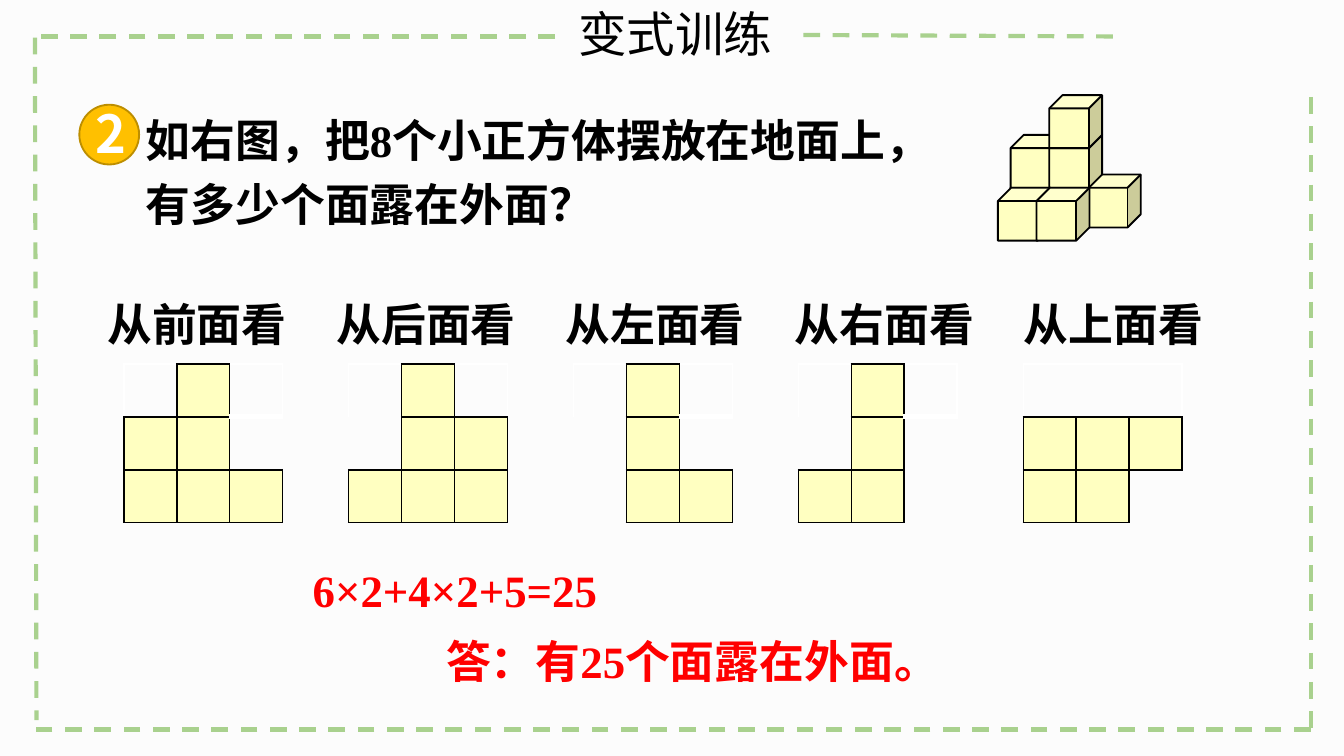
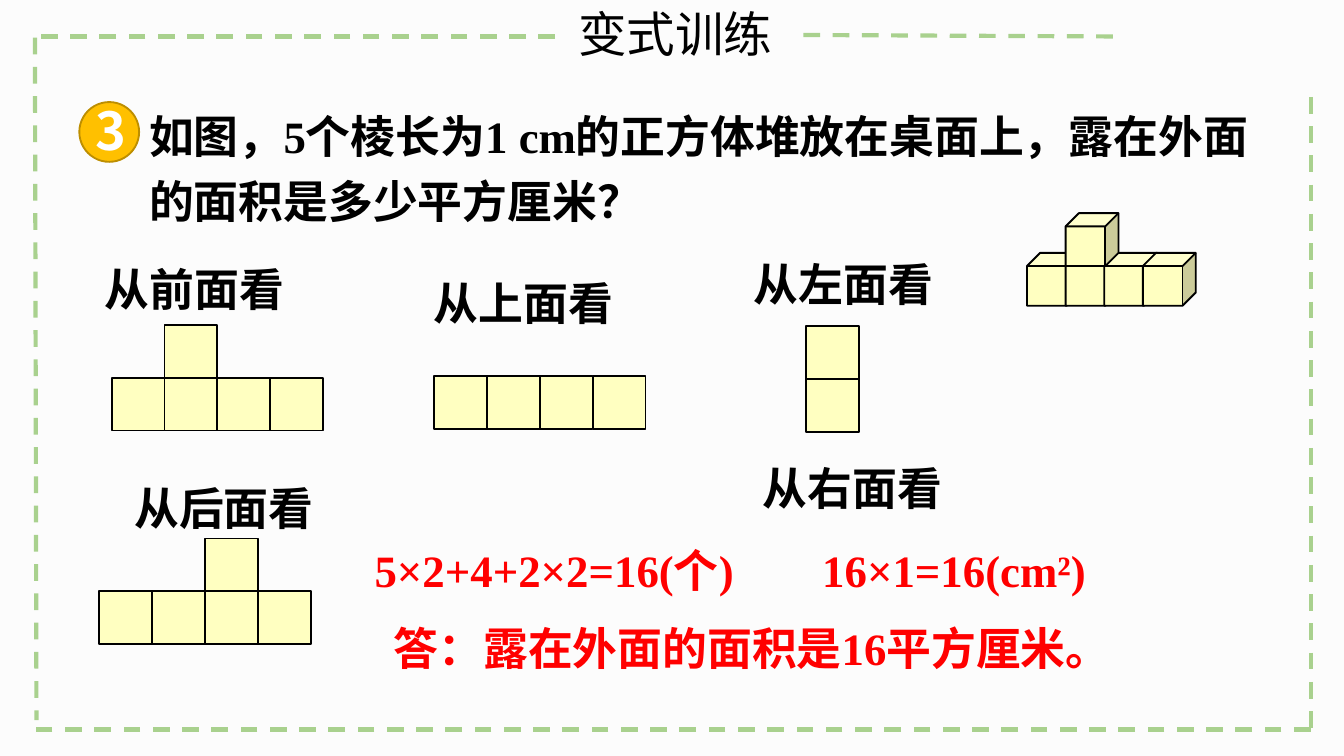
import lxml.etree
import pptx
import pptx.dml.color
import pptx.enum.dml
import pptx.enum.shapes
import pptx.enum.text
import pptx.oxml.ns
import pptx.util

Cm = pptx.util.Cm
Pt = pptx.util.Pt
qn = pptx.oxml.ns.qn
RGBColor = pptx.dml.color.RGBColor
MSO_SHAPE = pptx.enum.shapes.MSO_SHAPE
PP_ALIGN = pptx.enum.text.PP_ALIGN
MSO_AUTO_SIZE = pptx.enum.text.MSO_AUTO_SIZE

PAPER = RGBColor(0xFC, 0xFC, 0xFC)
GREEN = RGBColor(0xA9, 0xD1, 0x8E)
CREAM = RGBColor(0xFF, 0xFF, 0xC1)
GOLD = RGBColor(0xFF, 0xC0, 0x00)
BROWN = RGBColor(0xBD, 0x8E, 0x00)
BLACK = RGBColor(0, 0, 0)
WHITE = RGBColor(0xFF, 0xFF, 0xFF)
RED = RGBColor(0xFF, 0, 0)
SANS = "Noto Sans CJK SC"
SERIF = "Times New Roman"


def write(page, text, left, top, width, height=1.5, box=None, font=SANS, size=24,
          color=BLACK, bold=True, spacing=1.2, align=PP_ALIGN.LEFT, wrap=True):
    if box is None:
        box = page.shapes.add_textbox(0, 0, 0, 0)
    box.left, box.top, box.width, box.height = Cm(left), Cm(top), Cm(width), Cm(height)
    frame = box.text_frame
    frame.word_wrap = wrap
    frame.auto_size = MSO_AUTO_SIZE.SHAPE_TO_FIT_TEXT
    frame.vertical_anchor = pptx.enum.text.MSO_ANCHOR.TOP
    para = frame.paragraphs[0]
    para.alignment = align
    para.line_spacing = spacing
    span = para.add_run()
    span.text = text
    span.font.name = font
    span.font.size = Pt(size)
    span.font.bold = bold
    span.font.color.rgb = color
    lxml.etree.SubElement(span._r.get_or_add_rPr(), qn("a:ea"), typeface=SANS)


def stack(page, kind, left, top, step_x, step_y, places):
    group = page.shapes.add_group_shape()
    for column, level, front in places:
        block = group.shapes.add_shape(
            kind, Cm(left + step_x * column - 0.24 * front),
            Cm(top - step_y * level + 0.25 * front), Cm(1), Cm(1))
        block.shadow.inherit = False
        block.fill.solid()
        block.fill.fore_color.rgb = CREAM
        block.line.color.rgb = BLACK
        block.line.width = Pt(1)


deck = pptx.Presentation()
deck.slide_width = Cm(25.4)
deck.slide_height = Cm(14.29)
deck.slide_master.background.fill.solid()
deck.slide_master.background.fill.fore_color.rgb = PAPER

frame_lines = [
    (0.66, 0.71, 0.69, 13.61),
    (24.77, 1.83, 24.77, 13.79),
    (24.77, 13.79, 0.69, 13.79),
    (21.03, 0.69, 15.04, 0.66),
    (10.49, 0.69, 0.69, 0.69),
]
questions = [
    ("2", 1.98, "如右图，把8个小正方体摆放在地面上，有多少个面露在外面？", 2.51, 1.8, 14.94),
    ("3", 1.93, "如图，5个棱长为1 cm的正方体堆放在桌面上，露在外面的面积是多少平方厘米？",
     2.57, 1.73, 21.46),
]
pages = []
for number, badge_top, question, left, top, width in questions:
    page = deck.slides.add_slide(deck.slide_layouts[5])
    pages.append(page)
    for x1, y1, x2, y2 in frame_lines:
        edge = page.shapes.add_connector(
            pptx.enum.shapes.MSO_CONNECTOR.STRAIGHT, Cm(x1), Cm(y1), Cm(x2), Cm(y2))
        edge.line.color.rgb = GREEN
        edge.line.width = Pt(2.25)
        edge.line.dash_style = pptx.enum.dml.MSO_LINE.DASH
        lxml.etree.SubElement(edge._element.spPr, qn("a:effectLst"))
    write(page, "变式训练", 10.67, -0.05, 4.39, 1.37, box=page.shapes.title,
          size=26, bold=False, spacing=1.0)
    write(page, question, left, top, width, 2.72, font=SERIF)
    badge = page.shapes.add_shape(MSO_SHAPE.OVAL, Cm(1.5), Cm(badge_top), Cm(1.13), Cm(1.13))
    badge.shadow.inherit = False
    badge.fill.solid()
    badge.fill.fore_color.rgb = GOLD
    badge.line.color.rgb = BROWN
    badge.line.width = Pt(1)
    write(page, number, 1.55, badge_top - 0.2, 1.02, 1.45, size=28, color=WHITE,
          spacing=1.0, align=PP_ALIGN.CENTER, wrap=False)

page = pages[0]
stack(page, MSO_SHAPE.CUBE, 19.1, 3.3, 0.73, 0.75,
      [(0, 0, 0), (1, 0, 0), (2, 0, 0), (0, 1, 0), (1, 1, 0),
       (0, 0, 1), (1, 0, 1), (1, 2, 0)])

views = [
    ("从前面看", [".#.", "##.", "###"]),
    ("从后面看", [".#.", ".##", "###"]),
    ("从左面看", [".#.", ".#.", ".##"]),
    ("从右面看", [".#.", ".#.", "##."]),
    ("从上面看", ["...", "###", "##."]),
]
sides = [("a:lnL", 0, -1), ("a:lnR", 0, 1), ("a:lnT", -1, 0), ("a:lnB", 1, 0)]
for index, (label, pattern) in enumerate(views):
    write(page, label, 1.78 + 4.33 * index, 5.28, 4.14)
    table = page.shapes.add_table(
        3, 3, Cm(2.34 + 4.25 * index), Cm(6.88), Cm(3), Cm(3)).table
    table.first_row = False
    table.horz_banding = False
    filled = {(r, c) for r in range(3) for c in range(3) if pattern[r][c] == "#"}
    for r in range(3):
        table.rows[r].height = Cm(1)
        for c in range(3):
            cell = table.cell(r, c)
            cell.margin_top = cell.margin_bottom = 0
            if (r, c) in filled:
                cell.fill.solid()
                cell.fill.fore_color.rgb = CREAM
            else:
                cell.fill.background()
            for order, (tag, down, across) in enumerate(sides):
                beside = (r + down, c + across)
                outer = r == 0 and (down == -1 or beside[1] not in range(3))
                gap = c == 2 and {r, beside[0]} == {0, 1}
                if filled & {(r, c), beside}:
                    color, weight = BLACK, 1
                elif outer or gap:
                    color, weight = WHITE, 3 if gap else 1
                else:
                    color, weight = None, 1
                border = lxml.etree.Element(qn(tag), w=str(int(Pt(weight))))
                if color is None:
                    lxml.etree.SubElement(border, qn("a:noFill"))
                else:
                    paint = lxml.etree.SubElement(border, qn("a:solidFill"))
                    lxml.etree.SubElement(paint, qn("a:srgbClr"), val=str(color))
                cell._tc.get_or_add_tcPr().insert(order, border)

write(page, "6×2+4×2+5=25", 5.66, 10.31, 9.98, 1.37, font=SERIF, color=RED)
write(page, "答：有25个面露在外面。", 8.18, 11.66, 9.98, font=SERIF, color=RED)

page = pages[1]
row = [(column, 0, 0) for column in range(4)]
stack(page, MSO_SHAPE.CUBE, 19.41, 4.78, 0.73, 0.75, row + [(1, 1, 0)])
for left, top, places in [
    (8.2, 7.11, row),
    (2.11, 7.14, row + [(1, 1, 0)]),
    (1.88, 11.18, row + [(2, 1, 0)]),
    (15.24, 7.16, [(0, 0, 0), (0, 1, 0)]),
]:
    stack(page, MSO_SHAPE.RECTANGLE, left, top, 1, 1, places)
for label, left, top in [
    ("从前面看", 1.73, 4.62),
    ("从后面看", 2.29, 8.76),
    ("从左面看", 14, 4.52),
    ("从右面看", 14.17, 8.38),
    ("从上面看", 7.95, 4.88),
]:
    write(page, label, left, top, 4.14)
for answer, left, top, width in [
    ("5×2+4+2×2=16(个)", 6.83, 9.93, 8.92),
    ("答：露在外面的面积是16平方厘米。", 7.19, 11.4, 14.91),
    ("16×1=16(cm²)", 15.29, 9.93, 8.92),
]:
    write(page, answer, left, top, width, font=SERIF, color=RED)

deck.save("out.pptx")
